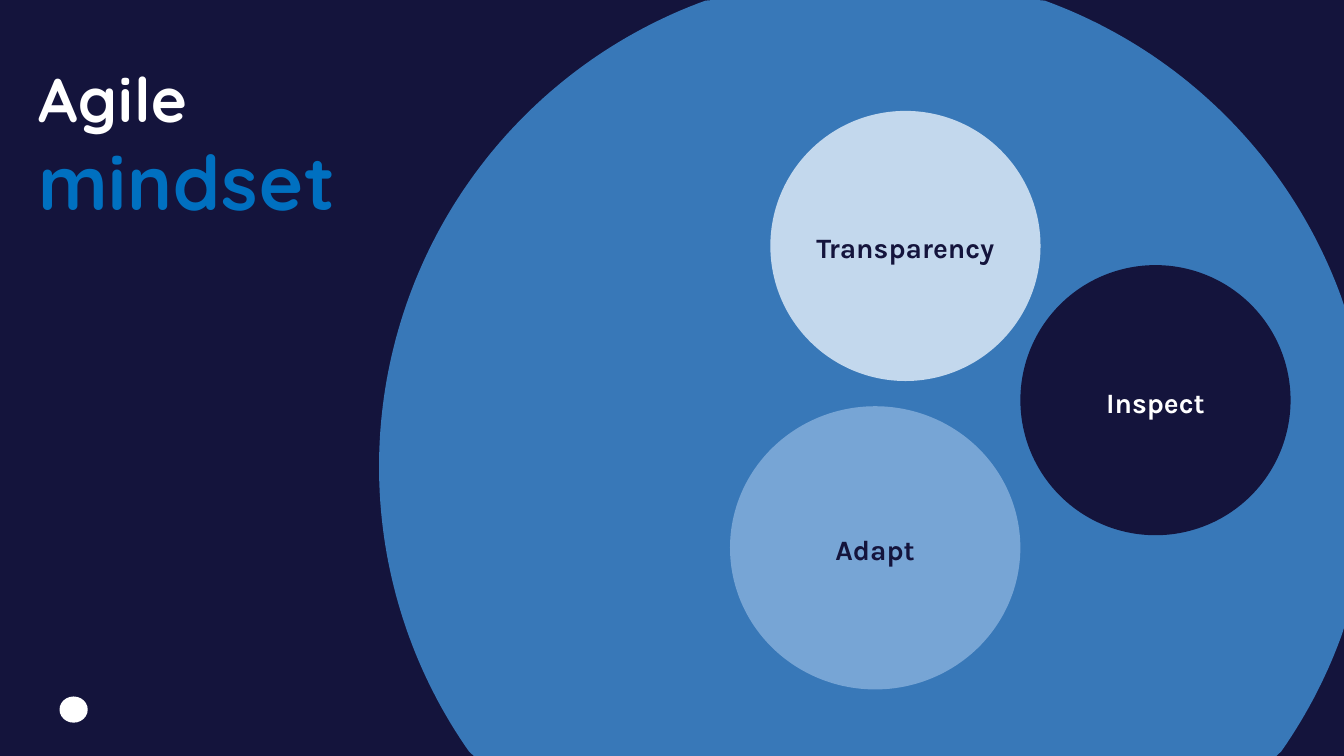
from math import cos, radians, sin

from pptx import Presentation
from pptx.dml.color import RGBColor
from pptx.enum.shapes import MSO_SHAPE as Shape
from pptx.enum.text import MSO_ANCHOR as Anchor, MSO_AUTO_SIZE as AutoSize, PP_ALIGN as Align
from pptx.util import Inches, Pt

WIDTH, HEIGHT = 13.33, 7.5
COLORS = {
    "navy": "14143C",
    "blue": "3878B8",
    "pale": "C3D8ED",
    "mid": "77A5D5",
    "bright": "0070C0",
    "white": "FFFFFF",
}
TITLE_BOX = (0.28, 0.54, 6.96, 1.75)
TITLE_LINES = [("Agile", 44, "white"), ("mindset", 54, "bright")]
# label, (left, top, width, height), fill, text colour
PRINCIPLES = [
    ("Transparency", (7.64, 1.1, 2.68, 2.68), "pale", "navy"),
    ("Adapt", (7.24, 4.03, 2.88, 2.81), "mid", "navy"),
    ("Inspect", (10.12, 2.63, 2.68, 2.68), "navy", "white"),
]
EMBLEM_BOX = (0.59, 6.91, 0.28, 0.26)
BACKDROP_CENTER, BACKDROP_RADIUS = (8.68, 4.63), 4.92


def color(name):
    return RGBColor.from_string(COLORS[name])


def paint(shape, fill):
    shape.shadow.inherit = False
    shape.fill.solid()
    shape.fill.fore_color.rgb = color(fill)
    shape.line.fill.background()


def add_ellipse(slide, box, fill):
    ellipse = slide.shapes.add_shape(Shape.OVAL, *map(Inches, box))
    paint(ellipse, fill)
    return ellipse


def write(paragraph, text, *, size, font, ink, align=Align.LEFT, line_spacing=None, tracking=None):
    """Fill a paragraph with one bold run; tracking is in points."""
    paragraph.alignment = align
    paragraph.line_spacing = line_spacing
    run = paragraph.add_run()
    run.text = text
    run.font.size = Pt(size)
    run.font.name = font
    run.font.bold = True
    run.font.color.rgb = color(ink)
    if tracking:
        run.font._element.set("spc", str(round(tracking * 100)))


def add_backdrop(slide):
    """Draw the large circle, cut off at the slide edges."""
    center_x, center_y = BACKDROP_CENTER
    points = []
    for degree in range(360):
        x = center_x + BACKDROP_RADIUS * cos(radians(degree))
        y = center_y + BACKDROP_RADIUS * sin(radians(degree))
        points.append((Inches(min(x, WIDTH)), Inches(min(max(y, 0), HEIGHT))))
    builder = slide.shapes.build_freeform(*points[0])
    builder.add_line_segments(points[1:], close=True)
    paint(builder.convert_to_shape(), "blue")


def add_title(slide):
    frame = slide.shapes.add_textbox(*map(Inches, TITLE_BOX)).text_frame
    frame.word_wrap = True
    frame.auto_size = AutoSize.SHAPE_TO_FIT_TEXT
    frame.vertical_anchor = Anchor.BOTTOM
    for index, (text, size, ink) in enumerate(TITLE_LINES):
        paragraph = frame.add_paragraph() if index else frame.paragraphs[0]
        write(paragraph, text, size=size, font="Quicksand", ink=ink, tracking=0.8)


def add_principle(slide, label, box, fill, ink):
    frame = add_ellipse(slide, box, fill).text_frame
    frame.word_wrap = True
    frame.vertical_anchor = Anchor.MIDDLE
    frame.margin_left = frame.margin_right = frame.margin_top = frame.margin_bottom = 0
    write(frame.paragraphs[0], label, size=20, font="Karla", ink=ink,
          align=Align.CENTER, line_spacing=1.11)


def main():
    presentation = Presentation()
    presentation.slide_width, presentation.slide_height = Inches(WIDTH), Inches(HEIGHT)
    slide = presentation.slides.add_slide(presentation.slide_layouts[6])
    slide.background.fill.solid()
    slide.background.fill.fore_color.rgb = color("navy")

    add_ellipse(slide, EMBLEM_BOX, "white")
    add_backdrop(slide)
    add_title(slide)
    for principle in PRINCIPLES:
        add_principle(slide, *principle)
    presentation.save("out.pptx")


if __name__ == "__main__":
    main()
